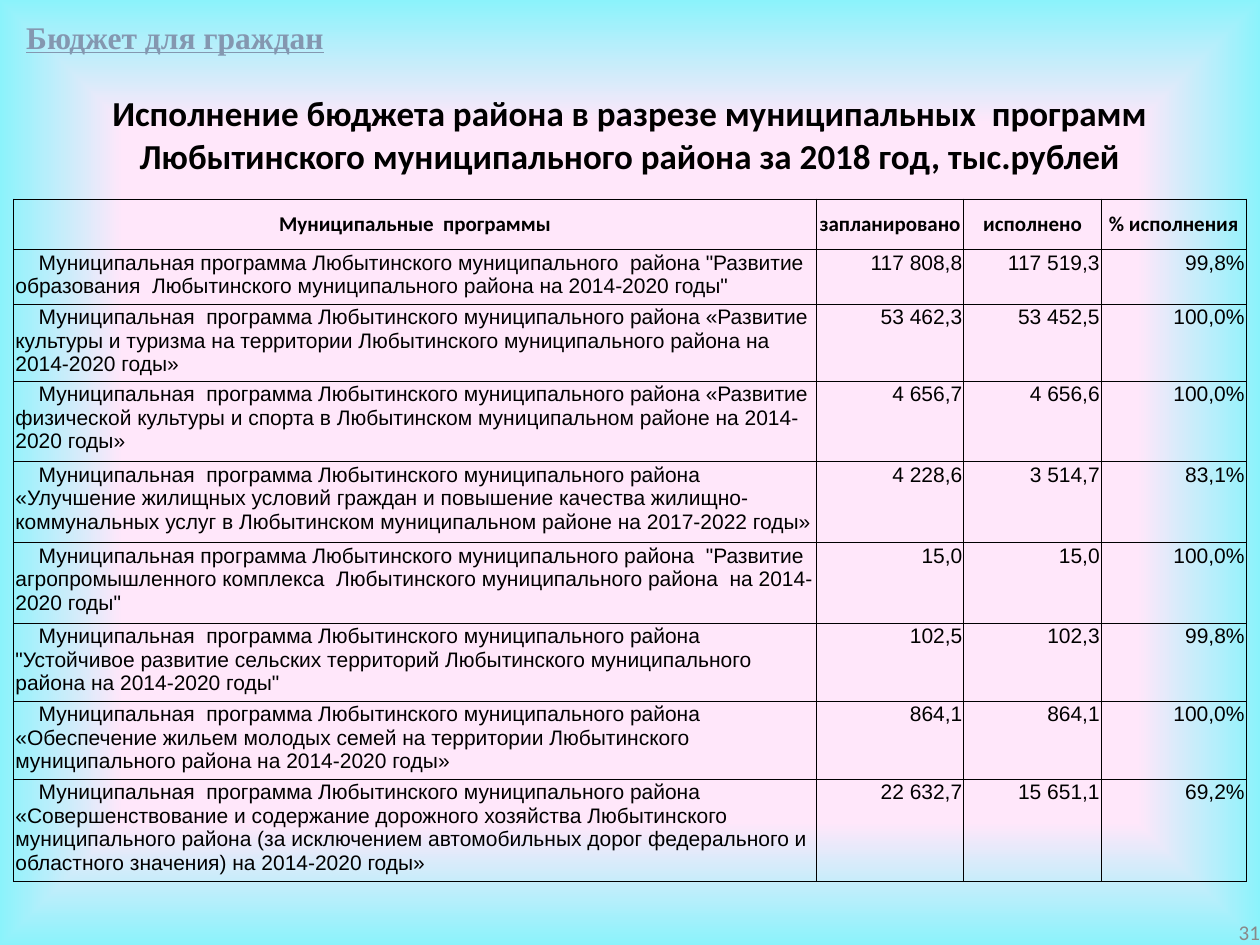
from dataclasses import dataclass

from lxml import etree
from pptx import Presentation
from pptx.dml.color import RGBColor
from pptx.enum.text import MSO_ANCHOR, PP_ALIGN
from pptx.oxml.ns import qn
from pptx.slide import Slide
from pptx.table import _Cell
from pptx.text.text import _Paragraph
from pptx.util import Cm, Length, Pt

LEFT, CENTER, RIGHT = PP_ALIGN.LEFT, PP_ALIGN.CENTER, PP_ALIGN.RIGHT
TOP, MIDDLE = MSO_ANCHOR.TOP, MSO_ANCHOR.MIDDLE


@dataclass(frozen=True)
class TextStyle:
    font: str
    size: float
    color: str = "000000"
    bold: bool = False
    underline: bool = False


@dataclass(frozen=True)
class Theme:
    banner: TextStyle = TextStyle("Times New Roman", 18, "8497B0", bold=True, underline=True)
    title: TextStyle = TextStyle("Calibri", 20, bold=True)
    header: TextStyle = TextStyle("Calibri", 12, bold=True)
    body: TextStyle = TextStyle("Arial", 12)
    page_number: TextStyle = TextStyle("Calibri", 12, "898989")
    border_color: str = "000000"
    border_width: Length = Pt(0.5)
    background: tuple = ((74, "FFE7FA"), (100, "8BF3FB"), (100, "B5D2EC"), (100, "CEE1F2"))


@dataclass(frozen=True)
class Box:
    left: float
    top: float
    width: float
    height: float

    def lengths(self) -> tuple[Length, ...]:
        return Cm(self.left), Cm(self.top), Cm(self.width), Cm(self.height)


@dataclass(frozen=True)
class Program:
    name: str
    planned: str
    executed: str
    percent: str
    height: float


THEME = Theme()
HEADERS = ("Муниципальные  программы", "запланировано", "исполнено", "% исполнения")
HEADER_HEIGHT = 1.02
COLUMN_WIDTHS = (16.18, 2.97, 2.77, 2.92)
FIRST_LINE_INDENT = Cm(0.47)
CELL_INSET = Cm(0.03)
PROGRAMS = (
    Program('Муниципальная программа Любытинского муниципального  района "Развитие образования  '
            'Любытинского муниципального района на 2014-2020 годы"',
            "117 808,8", "117 519,3", "99,8%", 1.1),
    Program("Муниципальная  программа Любытинского муниципального района «Развитие культуры и туризма "
            "на территории Любытинского муниципального района на 2014-2020 годы»",
            "53 462,3", "53 452,5", "100,0%", 1.54),
    Program("Муниципальная  программа Любытинского муниципального района «Развитие физической культуры "
            "и спорта в Любытинском муниципальном районе на 2014-2020 годы»",
            "4 656,7", "4 656,6", "100,0%", 1.62),
    Program("Муниципальная  программа Любытинского муниципального района «Улучшение жилищных условий "
            "граждан и повышение качества жилищно-коммунальных услуг в Любытинском муниципальном "
            "районе на 2017-2022 годы»",
            "4 228,6", "3 514,7", "83,1%", 1.63),
    Program('Муниципальная программа Любытинского муниципального района  "Развитие агропромышленного '
            'комплекса  Любытинского муниципального района  на 2014-2020 годы"',
            "15,0", "15,0", "100,0%", 1.63),
    Program('Муниципальная  программа Любытинского муниципального района "Устойчивое развитие сельских '
            'территорий Любытинского муниципального района на 2014-2020 годы"',
            "102,5", "102,3", "99,8%", 1.57),
    Program("Муниципальная  программа Любытинского муниципального района «Обеспечение жильем молодых "
            "семей на территории Любытинского муниципального района на 2014-2020 годы»",
            "864,1", "864,1", "100,0%", 1.57),
    Program("Муниципальная  программа Любытинского муниципального района «Совершенствование и содержание "
            "дорожного хозяйства Любытинского муниципального района (за исключением автомобильных дорог "
            "федерального и областного значения) на 2014-2020 годы»",
            "22 632,7", "15 651,1", "69,2%", 1.83),
)


def add_color(parent: etree._Element, color: str) -> etree._Element:
    return etree.SubElement(parent, qn("a:srgbClr"), val=color)


def paint_background(slide: Slide) -> None:
    """Fill the slide with a rectangular gradient spreading from its centre."""
    slide.background.fill.gradient()
    gradient = slide.element.find(".//" + qn("a:gradFill"))
    for child in list(gradient):
        gradient.remove(child)
    stops = etree.SubElement(gradient, qn("a:gsLst"))
    for position, color in THEME.background:
        add_color(etree.SubElement(stops, qn("a:gs"), pos=str(position * 1000)), color)
    shape_path = etree.SubElement(gradient, qn("a:path"), path="shape")
    etree.SubElement(shape_path, qn("a:fillToRect"), l="50000", t="50000", r="50000", b="50000")


def write(paragraph: _Paragraph, text: str, style: TextStyle, alignment: PP_ALIGN) -> None:
    paragraph.alignment = alignment
    run = paragraph.add_run()
    run.text = text
    font = run.font
    font.name, font.size = style.font, Pt(style.size)
    font.bold, font.underline = style.bold, style.underline
    font.color.rgb = RGBColor.from_string(style.color)


def add_text(slide: Slide, box: Box, text: str, style: TextStyle, alignment: PP_ALIGN,
             wrap: bool = True) -> _Paragraph:
    frame = slide.shapes.add_textbox(*box.lengths()).text_frame
    frame.word_wrap = wrap
    write(frame.paragraphs[0], text, style, alignment)
    return frame.paragraphs[0]


def add_text_shadow(paragraph: _Paragraph) -> None:
    properties = paragraph.runs[0].font._element
    effects = etree.Element(qn("a:effectLst"))
    shadow = etree.SubElement(effects, qn("a:outerShdw"), blurRad="38100", dist="38100",
                              dir="2700000", algn="tl")
    etree.SubElement(add_color(shadow, "000000"), qn("a:alpha"), val="43000")
    properties.find(qn("a:solidFill")).addnext(effects)


def add_borders(cell: _Cell) -> None:
    properties = cell._tc.get_or_add_tcPr()
    for index, side in enumerate(("a:lnL", "a:lnR", "a:lnT", "a:lnB")):
        line = etree.Element(qn(side), w=str(int(THEME.border_width)))
        add_color(etree.SubElement(line, qn("a:solidFill")), THEME.border_color)
        properties.insert(index, line)


def fill_cell(cell: _Cell, text: str, style: TextStyle, alignment: PP_ALIGN,
              anchor: MSO_ANCHOR, inset: Length) -> None:
    cell.fill.background()
    cell.margin_left = cell.margin_right = cell.margin_top = inset
    cell.margin_bottom = Cm(0)
    cell.vertical_anchor = anchor
    write(cell.text_frame.paragraphs[0], text, style, alignment)
    add_borders(cell)


def add_program_table(slide: Slide, left: float, top: float) -> None:
    heights = (HEADER_HEIGHT, *(program.height for program in PROGRAMS))
    box = Box(left, top, sum(COLUMN_WIDTHS), sum(heights))
    table = slide.shapes.add_table(len(heights), len(COLUMN_WIDTHS), *box.lengths()).table
    table.first_row = table.horz_banding = False
    for column, width in zip(table.columns, COLUMN_WIDTHS):
        column.width = Cm(width)
    for row, height in zip(table.rows, heights):
        row.height = Cm(height)
    for column, header in enumerate(HEADERS):
        fill_cell(table.cell(0, column), header, THEME.header, CENTER, MIDDLE, Cm(0))
    for row, program in enumerate(PROGRAMS, start=1):
        name_cell = table.cell(row, 0)
        fill_cell(name_cell, program.name, THEME.body, LEFT, TOP, CELL_INSET)
        paragraph_properties = name_cell.text_frame.paragraphs[0]._p.get_or_add_pPr()
        paragraph_properties.set("marL", "0")
        paragraph_properties.set("indent", str(int(FIRST_LINE_INDENT)))
        for column, value in enumerate((program.planned, program.executed, program.percent), start=1):
            fill_cell(table.cell(row, column), value, THEME.body, RIGHT, TOP, CELL_INSET)


def add_page_number(slide: Slide, number: str) -> None:
    frame = slide.shapes.add_textbox(*Box(19.48, 18.52, 5.92, 0.53).lengths()).text_frame
    frame.margin_left = frame.margin_right = frame.margin_top = frame.margin_bottom = Cm(0)
    frame.vertical_anchor = MIDDLE
    frame.word_wrap = True
    write(frame.paragraphs[0], number, THEME.page_number, RIGHT)


def main() -> None:
    presentation = Presentation()
    presentation.slide_width, presentation.slide_height = Cm(25.4), Cm(19.05)
    slide = presentation.slides.add_slide(presentation.slide_layouts[6])
    paint_background(slide)
    add_page_number(slide, "31")
    add_program_table(slide, 0.28, 4.01)
    title = add_text(slide, Box(0, 1.73, 25.4, 1.8),
                     "Исполнение бюджета района в разрезе муниципальных  программ "
                     "Любытинского муниципального района за 2018 год, тыс.рублей", THEME.title, CENTER)
    add_text_shadow(title)
    add_text(slide, Box(0.28, 0.23, 6.58, 1.02), "Бюджет для граждан", THEME.banner, LEFT, wrap=False)
    presentation.save("out.pptx")


if __name__ == "__main__":
    main()
